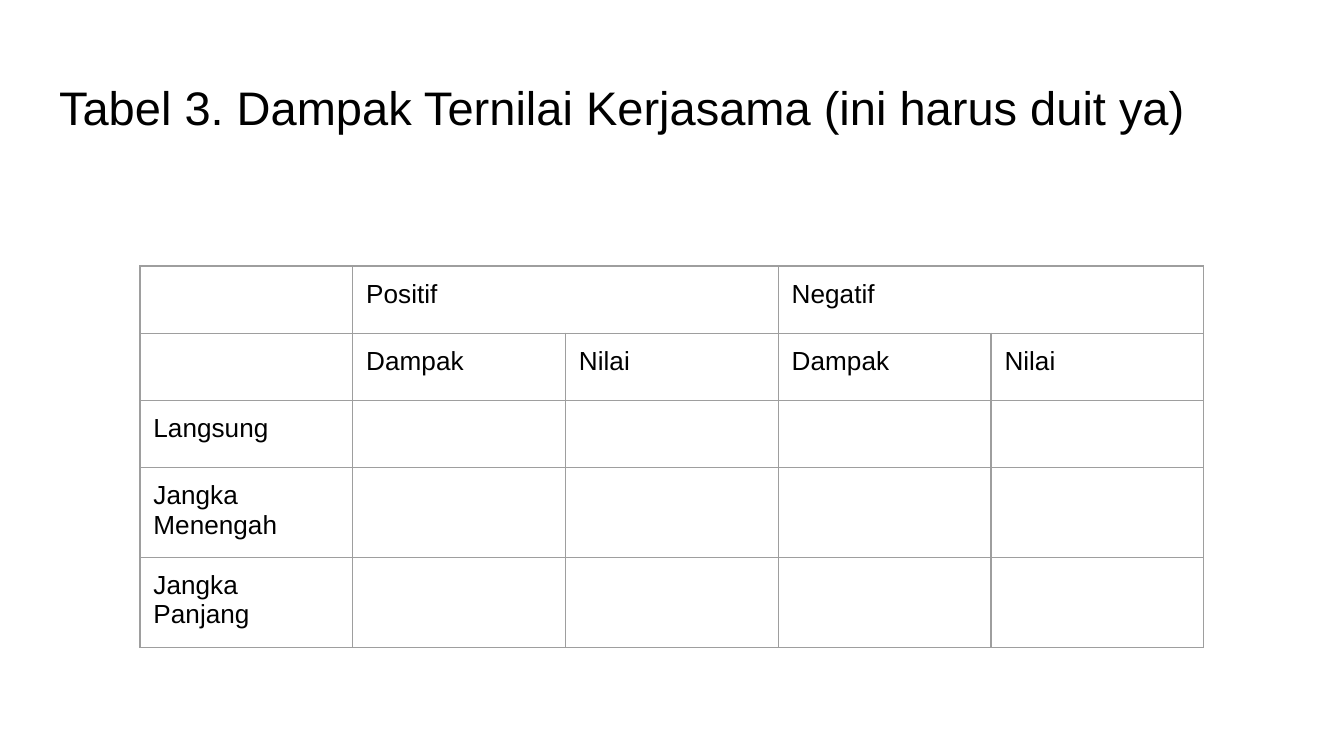
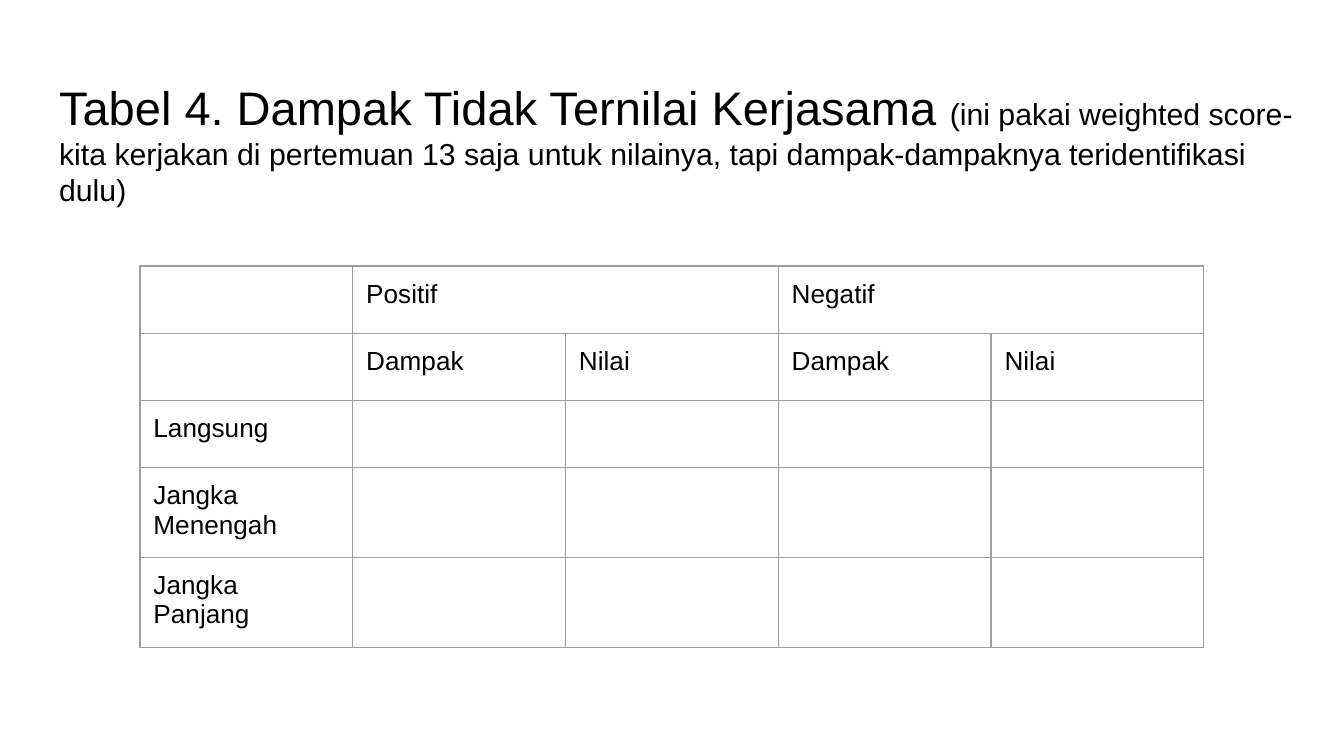
import pptx
import pptx.dml.color
import pptx.oxml
import pptx.oxml.ns
import pptx.util

PX = 3810
FONT = "Arial"
BLACK = "000000"
BORDER_COLOR = "9E9E9E"
BORDER_WIDTH = pptx.util.Pt(0.75)
TITLE_SIZE = 25.2
NOTE_SIZE = 16.2
CELL_SIZE = 14
INSET = 24
COLUMN_WIDTH = 380
ROW_HEIGHT = 100
FRAME_SIDE = 787

IMPACT_ROWS = [
    ["", "Positif", "", "Negatif", ""],
    ["", "Dampak", "Nilai", "Dampak", "Nilai"],
    ["Langsung", "", "", "", ""],
    ["Jangka Menengah", "", "", "", ""],
    ["Jangka Panjang", "", "", "", ""],
]
HEADER_SPANS = [(1, 2), (3, 4)]

SLIDES = [
    [("Tabel 3. Dampak Ternilai Kerjasama (ini harus duit ya)", TITLE_SIZE)],
    [
        ("Tabel 4. Dampak Tidak Ternilai Kerjasama ", TITLE_SIZE),
        (
            "(ini pakai weighted score-kita kerjakan di pertemuan 13 saja untuk "
            "nilainya, tapi dampak-dampaknya teridentifikasi dulu)",
            NOTE_SIZE,
        ),
    ],
]


def px(*lengths):
    """Turn lengths in px into EMU."""
    return [pptx.util.Emu(length * PX) for length in lengths]


def color(value):
    """Turn a hex string into a colour."""
    return pptx.dml.color.RGBColor.from_string(value)


def set_insets(target):
    """Give a cell or text frame the common insets."""
    for side in ("left", "top", "right", "bottom"):
        setattr(target, f"margin_{side}", px(INSET)[0])


def add_run(paragraph, text, size):
    """Add a run of text in the deck's font."""
    run = paragraph.add_run()
    run.text = text
    for name, value in {"name": FONT, "size": pptx.util.Pt(size)}.items():
        setattr(run.font, name, value)
    run.font.color.rgb = color(BLACK)


def add_title(slide, runs):
    """Add the slide title from pairs of text and size."""
    frame = slide.shapes.add_textbox(*px(82, 117, 2280, 150)).text_frame
    frame.word_wrap = True
    set_insets(frame)
    for text, size in runs:
        add_run(frame.paragraphs[0], text, size)


def add_borders(cell):
    """Draw a thin grey line on each side of a cell."""
    properties = cell._tc.get_or_add_tcPr()
    for side in "LRTB":
        properties.append(pptx.oxml.parse_xml(
            f'<a:ln{side} {pptx.oxml.ns.nsdecls("a")} w="{BORDER_WIDTH}">'
            f'<a:solidFill><a:srgbClr val="{BORDER_COLOR}"/></a:solidFill>'
            f'</a:ln{side}>'
        ))


def add_table(slide, rows, spans):
    """Add a bordered table whose first row has merged headings."""
    shape = slide.shapes.add_table(
        len(rows), len(rows[0]), *px(250, 475, FRAME_SIDE, FRAME_SIDE)
    )
    table = shape.table
    for name in ("first_row", "horz_banding"):
        setattr(table, name, False)
    for column in table.columns:
        column.width = px(COLUMN_WIDTH)[0]
    for row in table.rows:
        row.height = px(ROW_HEIGHT)[0]
    shape.width, shape.height = px(FRAME_SIDE, FRAME_SIDE)
    for row_index, texts in enumerate(rows):
        for column_index, text in enumerate(texts):
            cell = table.cell(row_index, column_index)
            set_insets(cell)
            add_borders(cell)
            cell.fill.background()
            if text:
                add_run(cell.text_frame.paragraphs[0], text, CELL_SIZE)
    for first, last in spans:
        table.cell(0, first).merge(table.cell(0, last))


def main():
    """Build and save the presentation."""
    presentation = pptx.Presentation()
    presentation.slide_width, presentation.slide_height = px(2400, 1350)
    for title_runs in SLIDES:
        slide = presentation.slides.add_slide(presentation.slide_layouts[6])
        add_title(slide, title_runs)
        add_table(slide, IMPACT_ROWS, HEADER_SPANS)
    presentation.save("out.pptx")


if __name__ == "__main__":
    main()
